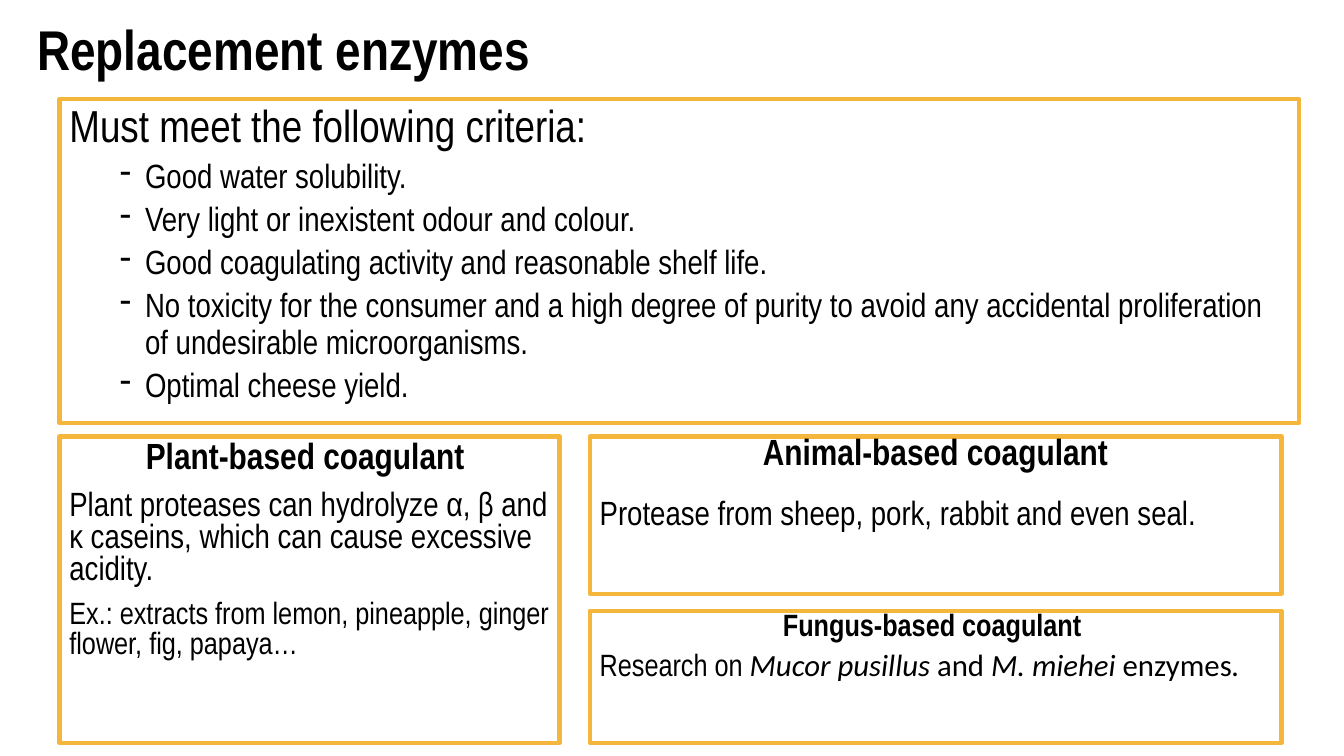
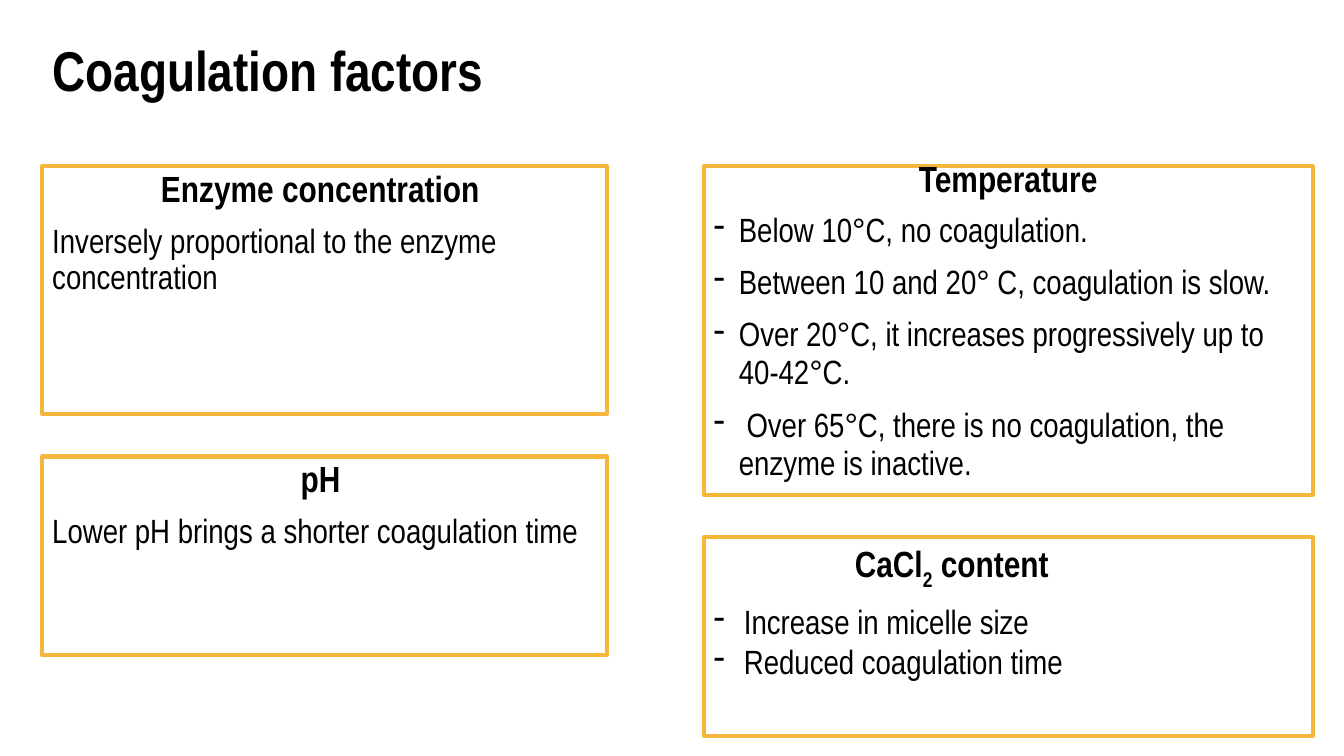
from dataclasses import dataclass

from lxml.etree import SubElement
from pptx import Presentation
from pptx.dml.color import RGBColor
from pptx.enum.shapes import MSO_SHAPE
from pptx.enum.text import MSO_ANCHOR, MSO_AUTO_SIZE, PP_ALIGN
from pptx.oxml.ns import qn
from pptx.util import Inches, Pt

COLOURS = {"text": "000000", "border": "F4B73C"}
FONT = "Arial Narrow"
BODY_FONT = "Calibri"


@dataclass
class Run:
    """A stretch of text with its own character format."""
    text: str
    font: str = FONT
    italic: bool = False
    subscript: bool = False


@dataclass
class Line:
    """A paragraph: its runs, size, spacing, indents in inches and bullet."""
    runs: list
    size: float = 24
    bold: bool = False
    align: PP_ALIGN = PP_ALIGN.LEFT
    spacing: float = 0.9
    before: float = 0
    indent: float = 0
    hanging: float = 0


def heading(text, size=26, spacing=0.9):
    """Return a bold centred box heading."""
    return Line([Run(text)], size, True, PP_ALIGN.CENTER, spacing)


def body(text, size=24, spacing=0.9, before=10):
    """Return a plain left-aligned paragraph."""
    return Line([Run(text)], size, spacing=spacing, before=before)


def dashes(texts, indent, hanging, spacing, before):
    """Return one dashed paragraph for each text."""
    return [Line([Run(text)], spacing=spacing, before=before, indent=indent, hanging=hanging)
            for text in texts]


def format_paragraph(paragraph, line):
    """Set the spacing, indents and dash of a paragraph."""
    paragraph.alignment = line.align
    paragraph.line_spacing = line.spacing
    paragraph.space_before = Pt(line.before)
    properties = paragraph._p.get_or_add_pPr()
    properties.set("marL", str(Inches(line.indent)))
    properties.set("indent", str(-Inches(line.hanging)))
    if line.hanging:
        colour = SubElement(properties, qn("a:buClr"))
        SubElement(colour, qn("a:srgbClr"), val=COLOURS["text"])
        SubElement(properties, qn("a:buChar"), char="-")


def add_run(paragraph, content, line):
    """Add one formatted run to a paragraph."""
    run = paragraph.add_run()
    run.text = content.text
    run.font.name = content.font
    run.font.size = Pt(line.size)
    run.font.bold = line.bold
    run.font.italic = content.italic
    run.font.color.rgb = RGBColor.from_string(COLOURS["text"])
    if content.subscript:
        run._r.get_or_add_rPr().set("baseline", "-25000")


def fill_text(shape, lines, anchor):
    """Write the lines into a shape."""
    frame = shape.text_frame
    frame.word_wrap = True
    frame.auto_size = MSO_AUTO_SIZE.NONE
    frame.vertical_anchor = anchor
    for index, line in enumerate(lines):
        paragraph = frame.add_paragraph() if index else frame.paragraphs[0]
        format_paragraph(paragraph, line)
        for content in line.runs:
            add_run(paragraph, content, line)


def add_titled_slide(presentation, text, left, top, height):
    """Add a title-only slide and place its title."""
    slide = presentation.slides.add_slide(presentation.slide_layouts[5])
    title = slide.shapes.title
    title.left, title.top = Inches(left), Inches(top)
    title.width, title.height = Inches(11.5), Inches(height)
    fill_text(title, [Line([Run(text)], 40, True)], MSO_ANCHOR.MIDDLE)
    return slide


def add_box(slide, left, top, width, height, lines):
    """Add an outlined box holding the lines."""
    position = [Inches(length) for length in (left, top, width, height)]
    shape = slide.shapes.add_shape(MSO_SHAPE.RECTANGLE, *position)
    shape.shadow.inherit = False
    shape.fill.background()
    shape.line.color.rgb = RGBColor.from_string(COLOURS["border"])
    shape.line.width = Pt(3)
    fill_text(shape, lines, MSO_ANCHOR.TOP)


def build_enzymes(presentation):
    """Build the slide on replacement enzymes."""
    slide = add_titled_slide(presentation, "Replacement enzymes", 0.27, 0.1, 0.84)
    left, right, lower_top = 0.59, 5.85, 4.33
    right_width = 6.86
    add_box(slide, left, lower_top, 4.96, 3.04, [
        heading("Plant-based coagulant ", spacing=0.8),
        body("Plant proteases can hydrolyze α, β and κ caseins, which can cause "
             "excessive acidity.", spacing=0.8),
        body("Ex.: extracts from lemon, pineapple, ginger flower, fig, papaya…", 22, 0.8),
    ])
    criteria = [
        "Good water solubility.",
        "Very light or inexistent odour and colour.",
        "Good coagulating activity and reasonable shelf life.",
        "No toxicity for the consumer and a high degree of purity to avoid any "
        "accidental proliferation of undesirable microorganisms.",
        "Optimal cheese yield.",
    ]
    add_box(slide, left, 0.98, 12.29, 3.22, [
        body("Must meet the following criteria:", 32, before=0),
        *dashes(criteria, 0.75, 0.25, 0.9, 5),
    ])
    add_box(slide, right, lower_top, right_width, 1.56, [
        heading("Animal-based coagulant", spacing=0.7),
        body("Protease from sheep, pork, rabbit and even seal.", spacing=0.7, before=22),
    ])
    research = [
        Run("Research on "),
        Run("Mucor pusillus", BODY_FONT, True),
        Run(" and ", BODY_FONT),
        Run("M. miehei ", BODY_FONT, True),
        Run("enzymes", BODY_FONT),
        Run(".", BODY_FONT, True),
    ]
    add_box(slide, right, 6.06, right_width, 1.31, [
        heading("Fungus-based coagulant ", 22, 0.7),
        Line(research, 22, spacing=0.7, before=10),
    ])


def build_factors(presentation):
    """Build the slide on coagulation factors."""
    slide = add_titled_slide(presentation, "Coagulation factors", 0.42, 0.23, 1)
    left, right, top = 0.42, 6.98, 1.65
    left_width, right_width, low_height = 5.6, 6.04, 1.97
    add_box(slide, left, top, left_width, 2.46, [
        heading("Enzyme concentration "),
        body("Inversely proportional to the enzyme concentration"),
    ])
    temperatures = [
        "Below 10°C, no coagulation.",
        "Between 10 and 20° C, coagulation is slow.",
        "Over 20°C, it increases progressively up to 40-42°C.",
        " Over 65°C, there is no coagulation, the enzyme is inactive.",
    ]
    add_box(slide, right, top, right_width, 3.26, [
        heading("Temperature", spacing=0.6),
        *dashes(temperatures, 0.25, 0.25, 0.95, 10),
    ])
    add_box(slide, left, 4.53, left_width, low_height, [
        heading("pH "),
        body("Lower pH brings a shorter coagulation time"),
    ])
    formula = [Run("CaCl"), Run("2", subscript=True), Run(" content")]
    add_box(slide, right, 5.33, right_width, low_height, [
        Line(formula, 26, True, indent=1.4),
        *dashes(["Increase in micelle size"], 0.3, 0.3, 1, 10),
        *dashes(["Reduced coagulation time"], 0.3, 0.3, 1, 0),
    ])


def main():
    """Build and save the presentation."""
    presentation = Presentation()
    presentation.slide_width = Inches(13.33)
    presentation.slide_height = Inches(7.5)
    build_enzymes(presentation)
    build_factors(presentation)
    presentation.save("out.pptx")


if __name__ == "__main__":
    main()
